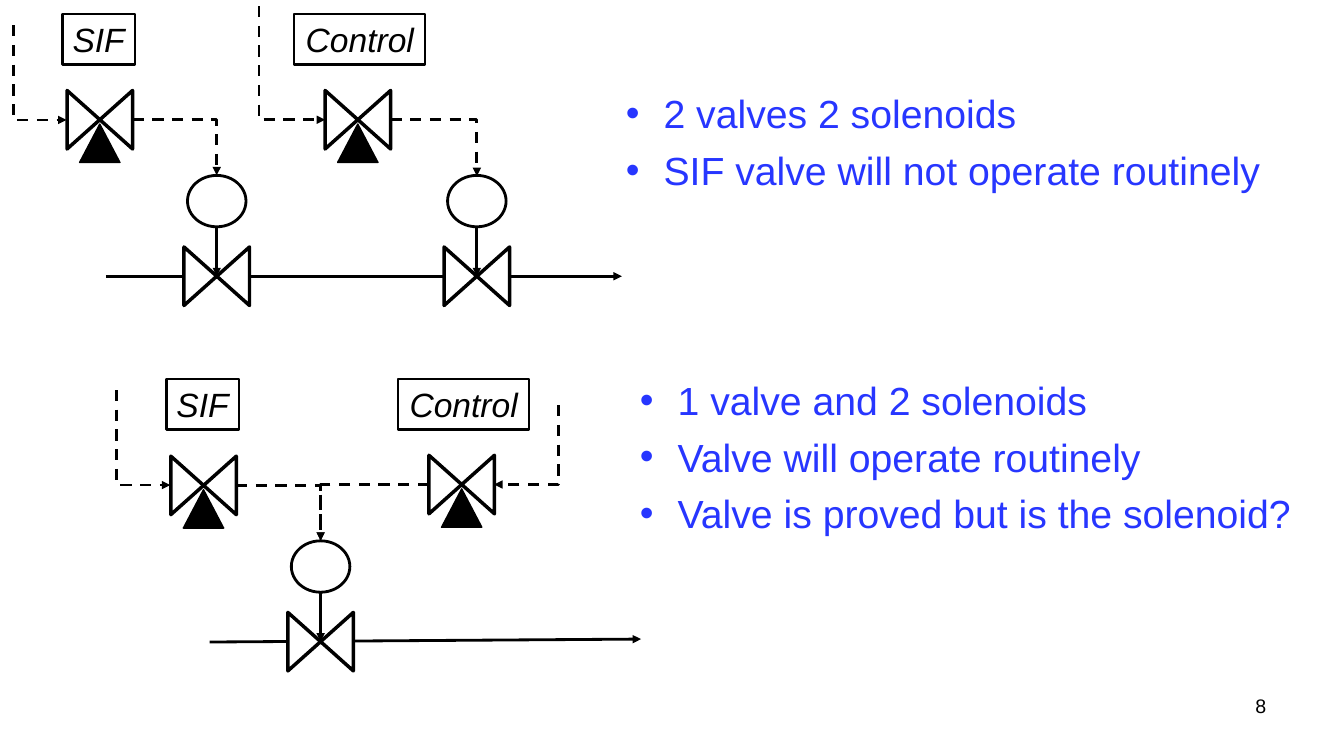
from dataclasses import dataclass

from lxml.etree import SubElement
from pptx import Presentation
from pptx.dml.color import RGBColor
from pptx.enum.dml import MSO_LINE
from pptx.enum.shapes import MSO_CONNECTOR, MSO_SHAPE
from pptx.enum.text import MSO_ANCHOR, PP_ALIGN
from pptx.oxml.ns import qn
from pptx.util import Pt

BLACK = "000000"
WHITE = "FFFFFF"
BLUE = "2736FF"


@dataclass
class Spot:
    x: float
    y: float


@dataclass
class Label:
    text: str
    x: float
    y: float
    w: float


@dataclass
class Bend:
    start: Spot
    end: Spot
    turn: int = 0
    flip: str = ""


@dataclass
class Notes:
    x: float
    y: float
    h: float
    lines: list[str]


FLOWS = [(Spot(75.6, 197.3), Spot(444.2, 197.3)),
         (Spot(149.8, 458.6), Spot(457.9, 456.5))]
VALVES = [Spot(154.8, 197.3), Spot(340.6, 197.3), Spot(229, 458.3)]
PILOTS = [Spot(71.3, 85.5), Spot(255.6, 85.5),
          Spot(145.4, 346.7), Spot(329.8, 346.1)]
LABELS = [Label("SIF", 44.6, 10.1, 51.8), Label("Control", 210.2, 10.1, 93.6),
          Label("SIF", 118.8, 270.7, 51.8), Label("Control", 284.4, 270.7, 93.6)]
BENDS = [
    Bend(Spot(94.7, 85.5), Spot(154.8, 125.3)),
    Bend(Spot(278.9, 85.5), Spot(340.6, 125.8)),
    Bend(Spot(185, 4.3), Spot(232.2, 85.5), 270, "flipH"),
    Bend(Spot(9.5, 18), Spot(47.6, 85.7), 270, "flipH"),
    Bend(Spot(168.6, 346.5), Spot(229, 386.2)),
    Bend(Spot(306.4, 346.1), Spot(229, 386.2), 180, "flipV"),
    Bend(Spot(398.9, 289.4), Spot(353, 346.1), 90),
    Bend(Spot(83.5, 278.6), Spot(121.6, 346.5), 270, "flipH"),
]
NOTES = [
    Notes(439.9, 60.5, 356.4,
          ["2 valves 2 solenoids", "SIF valve will not operate routinely"]),
    Notes(450, 265, 216,
          ["1 valve and 2 solenoids", "Valve will operate routinely",
           "Valve is proved but is the solenoid?"]),
]

deck = Presentation()
deck.slide_width, deck.slide_height = Pt(960), Pt(540)
slide = deck.slides.add_slide(deck.slide_layouts[6])
shapes = slide.shapes


def tint(code: str) -> RGBColor:
    return RGBColor.from_string(code)


def style(para, size: float, color: str, slant: bool = False) -> None:
    para.font.name = "Arial"
    para.font.size = Pt(size)
    para.font.italic = slant
    para.font.color.rgb = tint(color)


def draw(kind, x: float, y: float, w: float, h: float, line: float, fill: str = ""):
    shape = shapes.add_shape(kind, Pt(x), Pt(y), Pt(w), Pt(h))
    shape.shadow.inherit = False
    if fill:
        shape.fill.solid()
        shape.fill.fore_color.rgb = tint(fill)
    else:
        shape.fill.background()
    shape.line.color.rgb = tint(BLACK)
    shape.line.width = Pt(line)
    return shape


def arrow(kind, start: Spot, end: Spot, dash: bool = False):
    link = shapes.add_connector(kind, Pt(start.x), Pt(start.y), Pt(end.x), Pt(end.y))
    link.line.color.rgb = tint(BLACK)
    link.line.width = Pt(2)
    if dash:
        link.line.dash_style = MSO_LINE.DASH
    props = link._element.spPr
    SubElement(props.find(qn("a:ln")), qn("a:tailEnd"), type="triangle")
    SubElement(props, qn("a:effectLst"))
    return link


def collate(mid: Spot) -> None:
    draw(MSO_SHAPE.FLOWCHART_COLLATE, mid.x - 20.9, mid.y - 23.4,
         41.8, 46.8, 2.5, WHITE).rotation = 90


def valve(mid: Spot) -> None:
    collate(mid)
    draw(MSO_SHAPE.OVAL, mid.x - 20.9, mid.y - 72, 41.8, 36.7, 2, WHITE)
    arrow(MSO_CONNECTOR.STRAIGHT, Spot(mid.x, mid.y - 35.3), mid)


def pilot(mid: Spot) -> None:
    collate(mid)
    draw(MSO_SHAPE.ISOSCELES_TRIANGLE, mid.x - 14.4, mid.y + 3.1, 28.8, 27.4, 1, BLACK)


def label(item: Label) -> None:
    frame = draw(MSO_SHAPE.RECTANGLE, item.x, item.y, item.w, 36, 1.75).text_frame
    frame.word_wrap = False
    frame.vertical_anchor = MSO_ANCHOR.MIDDLE
    para = frame.paragraphs[0]
    para.text = item.text
    para.alignment = PP_ALIGN.CENTER
    style(para, 24, BLACK, True)


def bend(item: Bend) -> None:
    a, b = item.start, item.end
    w, h = abs(b.x - a.x), abs(b.y - a.y)
    if item.turn in (90, 270):
        w, h = h, w
    x, y = (a.x + b.x - w) / 2, (a.y + b.y - h) / 2
    link = arrow(MSO_CONNECTOR.ELBOW, Spot(x, y), Spot(x + w, y + h), True)
    props = link._element.spPr
    props.find(qn("a:prstGeom")).set("prst", "bentConnector2")
    frame = props.find(qn("a:xfrm"))
    if item.turn:
        frame.set("rot", str(item.turn * 60000))
    if item.flip:
        frame.set(item.flip, "1")


def box(x: float, y: float, w: float, h: float):
    frame = shapes.add_textbox(Pt(x), Pt(y), Pt(w), Pt(h)).text_frame
    frame.word_wrap = True
    return frame


def notes(item: Notes) -> None:
    frame = box(item.x, item.y, 504.7, item.h)
    for i, text in enumerate(item.lines):
        para = frame.add_paragraph() if i else frame.paragraphs[0]
        para.text = text
        props = para._p.get_or_add_pPr()
        props.set("marL", str(Pt(27)))
        props.set("indent", str(-Pt(27)))
        SubElement(props, qn("a:buFont"), typeface="Arial")
        SubElement(props, qn("a:buChar"), char="•")
        if i:
            para.space_before = Pt(7)
        style(para, 28, BLUE)


def main() -> None:
    for start, end in FLOWS:
        arrow(MSO_CONNECTOR.STRAIGHT, start, end)
    for draw_all, items in ((valve, VALVES), (pilot, PILOTS), (label, LABELS),
                            (bend, BENDS), (notes, NOTES)):
        for item in items:
            draw_all(item)
    page = box(687.6, 491.8, 223.9, 37.4).paragraphs[0]
    page.text = "8"
    page.alignment = PP_ALIGN.RIGHT
    style(page, 14, BLACK)
    deck.save("out.pptx")


if __name__ == "__main__":
    main()
